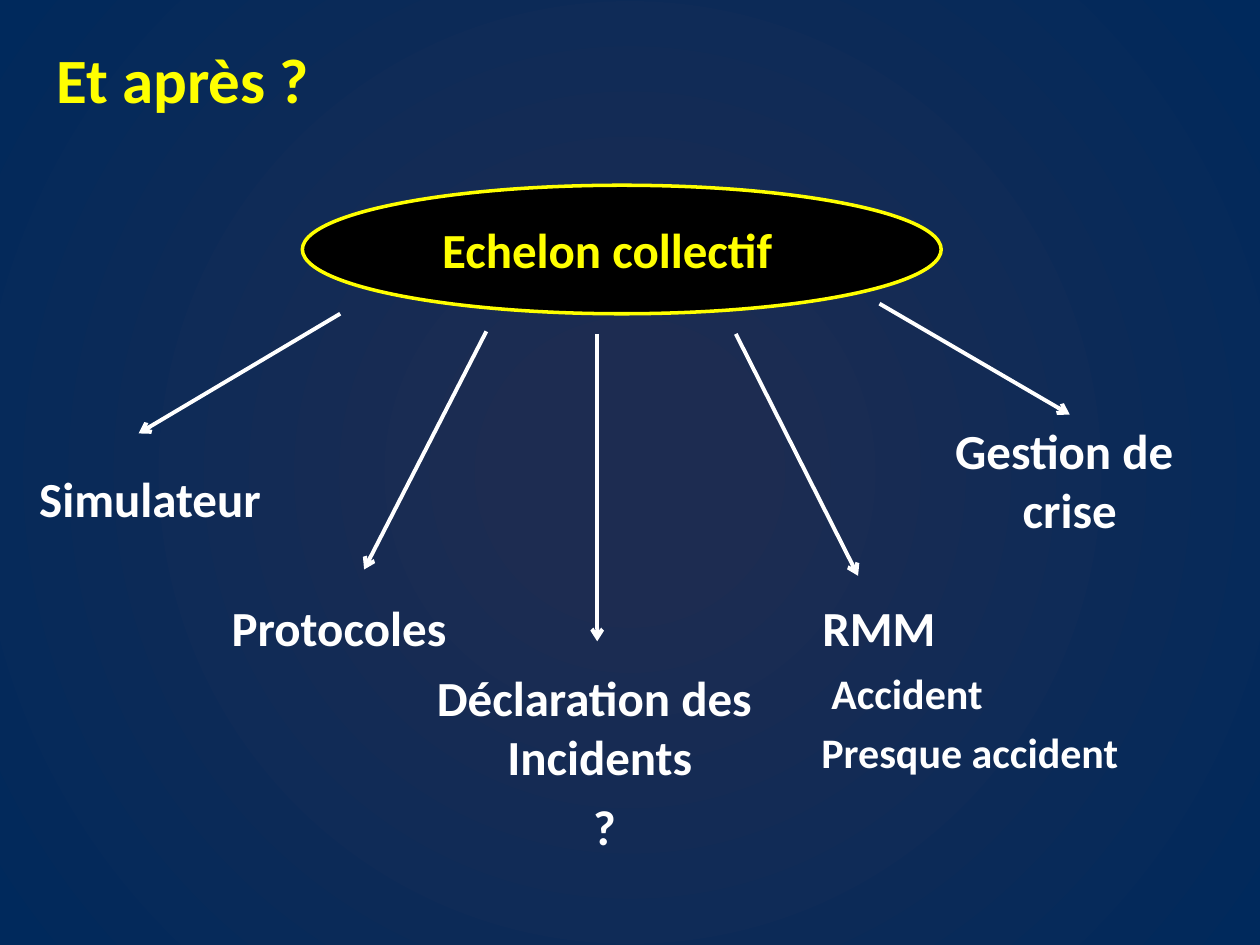
from lxml import etree
from pptx import Presentation
from pptx import util as u
from pptx.dml.color import RGBColor
from pptx.enum import shapes, text
from pptx.oxml.ns import qn

YELLOW = RGBColor(0xFF, 0xFF, 0x00)
WHITE = RGBColor(0xFF, 0xFF, 0xFF)
BLACK = RGBColor(0x00, 0x00, 0x00)
DUSK = RGBColor(0x1D, 0x2C, 0x51)
NAVY = RGBColor(0x00, 0x29, 0x5C)
LEFT, MID = text.PP_ALIGN.LEFT, text.PP_ALIGN.CENTER


class Deck:
    """Style and current slide; lengths are cells of a 10 x 7.5 grid."""
    font = "Calibri"
    cols, rows = 10, 7.5

    def __init__(self):
        self.prs = Presentation()
        self.prs.slide_width, self.prs.slide_height = u.Inches(10), u.Inches(7.5)
        self.slide = self.prs.slides.add_slide(self.prs.slide_layouts[5])

    def x(self, col):
        return round(self.prs.slide_width * col / self.cols)

    def y(self, row):
        return round(self.prs.slide_height * row / self.rows)

    def box(self, left, top, wide, high):
        return self.x(left), self.y(top), self.x(wide), self.y(high)

    def glow(self, inner, outer):
        fill = self.slide.background.fill
        fill.gradient()
        for stop, color, pos in zip(fill.gradient_stops, (inner, outer), (0.14, 1)):
            stop.color.rgb, stop.position = color, pos
        grad = self.slide.element.find(".//" + qn("a:gradFill"))
        grad.remove(grad.find(qn("a:lin")))
        ring = etree.SubElement(grad, qn("a:path"), {"path": "circle"})
        etree.SubElement(ring, qn("a:fillToRect"), dict.fromkeys("ltrb", "50000"))

    def letter(self, shape, words, size, color, align, wrap=False):
        frame = shape.text_frame
        frame.text = words
        frame.word_wrap = wrap
        frame.auto_size = text.MSO_AUTO_SIZE.NONE
        frame.vertical_anchor = text.MSO_ANCHOR.TOP
        for para in frame.paragraphs:
            para.alignment = align
            font = para.font
            font.name, font.size, font.bold = self.font, u.Pt(size), True
            font.color.rgb = color

    def title(self, words, *area):
        shape = self.slide.shapes.title
        shape.left, shape.top, shape.width, shape.height = self.box(*area)
        self.letter(shape, words, 36, YELLOW, LEFT)

    def label(self, words, area, size=28, color=WHITE, align=MID, wrap=False):
        shape = self.slide.shapes.add_textbox(*self.box(*area))
        self.letter(shape, words, size, color, align, wrap)

    def oval(self, *area):
        shape = self.slide.shapes.add_shape(shapes.MSO_SHAPE.OVAL, *self.box(*area))
        shape.shadow.inherit = False
        shape.fill.solid()
        shape.fill.fore_color.rgb = BLACK
        shape.line.color.rgb = YELLOW
        shape.line.width = u.Pt(2)

    def arrow(self, x1, y1, x2, y2):
        link = self.slide.shapes.add_connector(
            shapes.MSO_CONNECTOR.STRAIGHT, self.x(x1), self.y(y1), self.x(x2), self.y(y2))
        link.line.color.rgb = WHITE
        link.line.width = u.Pt(2.25)
        props = link.element.spPr
        etree.SubElement(props.find(qn("a:ln")), qn("a:tailEnd"), type="arrow")
        etree.SubElement(props, qn("a:effectLst"))


def main():
    deck = Deck()
    deck.glow(DUSK, NAVY)
    deck.title("Et après ?", 0.35, 0.27, 2.34, 0.71)

    # Central idea
    deck.oval(2.4, 1.47, 5.07, 1.02)
    deck.label("Echelon collectif", (3.41, 1.69, 4.58, 0.57),
               color=YELLOW, align=LEFT, wrap=True)

    # Arrows fanning out, left to right
    for ends in ((2.7, 2.49, 1.1, 3.44), (3.86, 2.63, 2.89, 4.52),
                 (4.74, 2.65, 4.74, 5.09), (5.84, 2.65, 6.81, 4.57),
                 (6.98, 2.41, 8.49, 3.29)):
        deck.arrow(*ends)

    # Branches, left to right
    for words, area in (
            ("Simulateur", (0.2, 3.67, 1.98, 0.57)),
            ("Protocoles", (1.73, 4.69, 1.92, 0.57)),
            ("Déclaration des \nIncidents", (3.35, 5.25, 2.82, 1.04)),
            ("RMM", (6.42, 4.69, 1.11, 0.57)),
            ("Gestion de \ncrise", (7.47, 3.29, 2.04, 1.04))):
        deck.label(words, area)

    # Details under the branches
    deck.label("?", (4.61, 6.27, 0.38, 0.57), align=LEFT)
    deck.label("Accident", (6.5, 5.25, 1.41, 0.5), size=24, align=LEFT)
    deck.label("Presque accident", (6.42, 5.72, 2.58, 0.5), size=24, align=LEFT)

    deck.prs.save("out.pptx")


if __name__ == "__main__":
    main()
